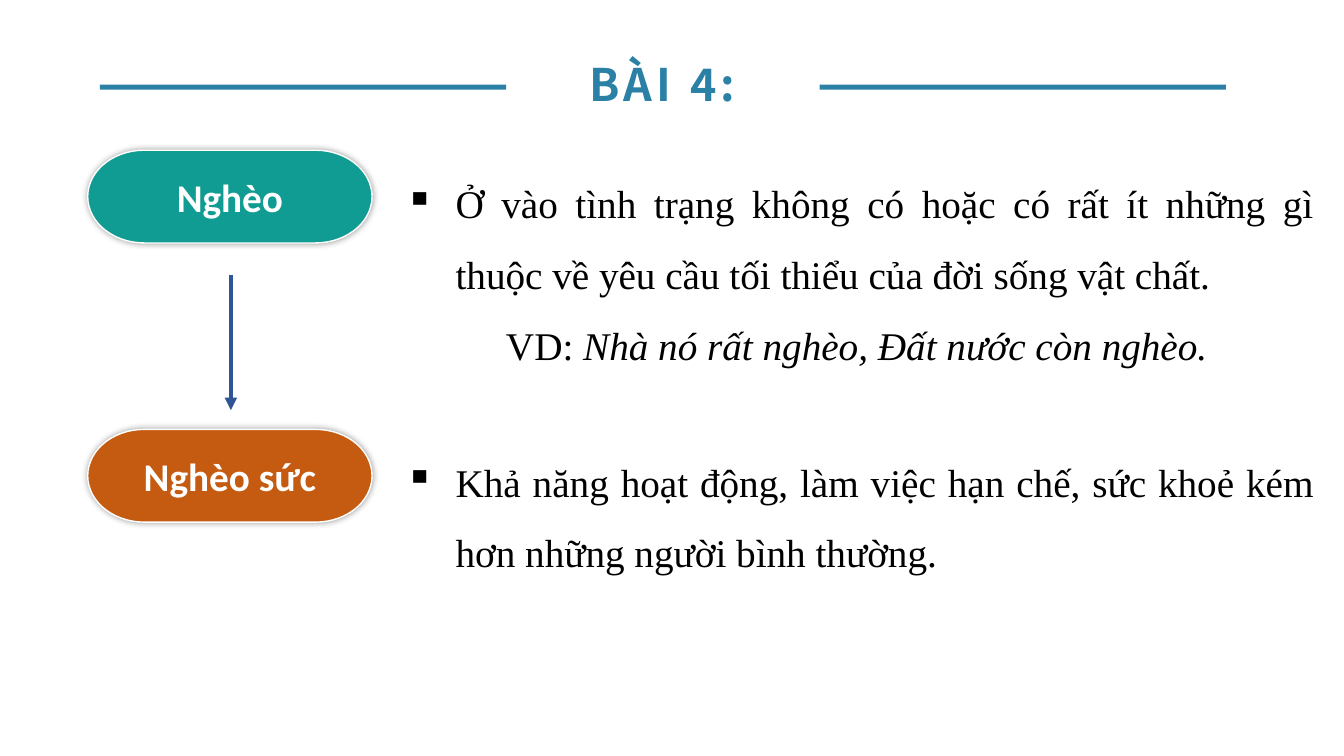
from dataclasses import dataclass
from math import cos, radians, sin

from lxml import etree
from pptx import Presentation, util as u
from pptx.dml.color import RGBColor
from pptx.enum import shapes, text
from pptx.oxml import ns

PX = 9144
BLUE, WHITE, BLACK = "2B80A5", "FFFFFF", "000000"
HEAD = dict(name="Noto Sans CJK SC", size=u.Pt(32), bold=True)
LABEL = dict(name="Calibri", size=u.Pt(28), bold=True)
BODY = dict(name="Times New Roman", size=u.Pt(28))


@dataclass
class Box:
    x: int
    y: int
    w: int
    h: int

    def emu(self) -> list[int]:
        return [n * PX for n in (self.x, self.y, self.w, self.h)]


@dataclass
class Term:
    box: Box
    word: str
    fill: str


@dataclass
class Note:
    box: Box
    gloss: str
    case: str = ""


TERMS = [
    Term(Box(87, 149, 282, 92), "Nghèo", "109C92"),
    Term(Box(87, 426, 282, 92), "Nghèo sức", "C55A11"),
]
NOTES = [
    Note(Box(392, 150, 921, 214),
         "Ở vào tình trạng không có hoặc có rất ít những gì thuộc về yêu cầu tối thiểu của đời sống vật chất.",
         "Nhà nó rất nghèo, Đất nước còn nghèo."),
    Note(Box(392, 426, 921, 143),
         "Khả năng hoạt động, làm việc hạn chế, sức khoẻ kém hơn những người bình thường."),
]


def tint(code: str) -> RGBColor:
    return RGBColor.from_string(code)


def add(node, tag: str, **attrs: str):
    child = etree.SubElement(node, ns.qn(tag))
    for key, val in attrs.items():
        child.set(key, val)
    return child


def write(para, words: str, color: str, style: dict):
    run = para.add_run()
    run.text = words
    for key, val in style.items():
        setattr(run.font, key, val)
    run.font.color.rgb = tint(color)
    return run


def bar(slide, box: Box) -> None:
    rule = slide.shapes.add_shape(shapes.MSO_SHAPE.RECTANGLE, *box.emu())
    rule.shadow.inherit = False
    rule.fill.solid()
    rule.fill.fore_color.rgb = tint(BLUE)
    rule.line.fill.background()


def title(slide, box: Box, words: str) -> None:
    frame = slide.shapes.add_textbox(*box.emu()).text_frame
    frame.word_wrap = True
    frame.vertical_anchor = text.MSO_ANCHOR.MIDDLE
    for side in ("left", "top", "right", "bottom"):
        setattr(frame, f"margin_{side}", 0)
    para = frame.paragraphs[0]
    para.alignment = text.PP_ALIGN.CENTER
    run = write(para, words, BLUE, HEAD)
    run.font._element.set("spc", "300")


def pill(slide, term: Term) -> None:
    x, y, w, h = term.box.emu()
    cap, mid = 56 * PX, y + h / 2
    dots = []
    for hub, start in ((x + w - cap, -90), (x + cap, 90)):
        for deg in range(start, start + 181, 6):
            dots.append((round(hub + cap * cos(radians(deg))),
                         round(mid + h / 2 * sin(radians(deg)))))
    path = slide.shapes.build_freeform(*dots[0])
    path.add_line_segments(dots[1:], close=True)
    shape = path.convert_to_shape()
    shape.fill.solid()
    shape.fill.fore_color.rgb = tint(term.fill)
    shape.line.color.rgb = tint(WHITE)
    shape.line.width = u.Pt(1)
    shape.shadow.inherit = False
    glow = add(shape._element.spPr.find(ns.qn("a:effectLst")), "a:outerShdw",
               blurRad=str(u.Pt(5)), dist="0", dir="0", algn="ctr", rotWithShape="0")
    add(add(glow, "a:srgbClr", val=BLACK), "a:alpha", val="40000")
    frame = shape.text_frame
    frame.word_wrap = True
    frame.vertical_anchor = text.MSO_ANCHOR.MIDDLE
    frame.paragraphs[0].alignment = text.PP_ALIGN.CENTER
    write(frame.paragraphs[0], term.word, WHITE, LABEL)


def indent(para, left: int, first: int):
    para.alignment = text.PP_ALIGN.JUSTIFY
    para.line_spacing = 1.5
    props = para._p.get_or_add_pPr()
    props.set("marL", str(left * PX))
    props.set("indent", str(first * PX))
    return props


def gloss(slide, note: Note) -> None:
    frame = slide.shapes.add_textbox(*note.box.emu()).text_frame
    frame.word_wrap = True
    para = frame.paragraphs[0]
    add(indent(para, 50, -50), "a:buChar", char="▪")
    write(para, note.gloss, BLACK, BODY)
    if note.case:
        para = frame.add_paragraph()
        indent(para, 100, 0)
        write(para, "VD: ", BLACK, BODY)
        write(para, note.case, BLACK, BODY | dict(italic=True))


def arrow(slide, x: int, top: int, end: int) -> None:
    line = slide.shapes.add_connector(
        shapes.MSO_CONNECTOR.STRAIGHT, x * PX, top * PX, x * PX, end * PX)
    line.line.color.rgb = tint("2F5597")
    line.line.width = u.Pt(3)
    add(line.line._get_or_add_ln(), "a:tailEnd", type="triangle")
    add(line._element.spPr, "a:effectLst")


def main() -> None:
    """Build the vocabulary slide and save it."""
    deck = Presentation()
    deck.slide_width, deck.slide_height = 1333 * PX, 750 * PX
    slide = deck.slides.add_slide(deck.slide_layouts[6])
    for x in (99, 813):
        bar(slide, Box(x, 84, 403, 5))
    title(slide, Box(493, 56, 328, 54), "BÀI 4:")
    for term in TERMS:
        pill(slide, term)
    for note in NOTES:
        gloss(slide, note)
    arrow(slide, 229, 273, 407)
    deck.save("out.pptx")


if __name__ == "__main__":
    main()
